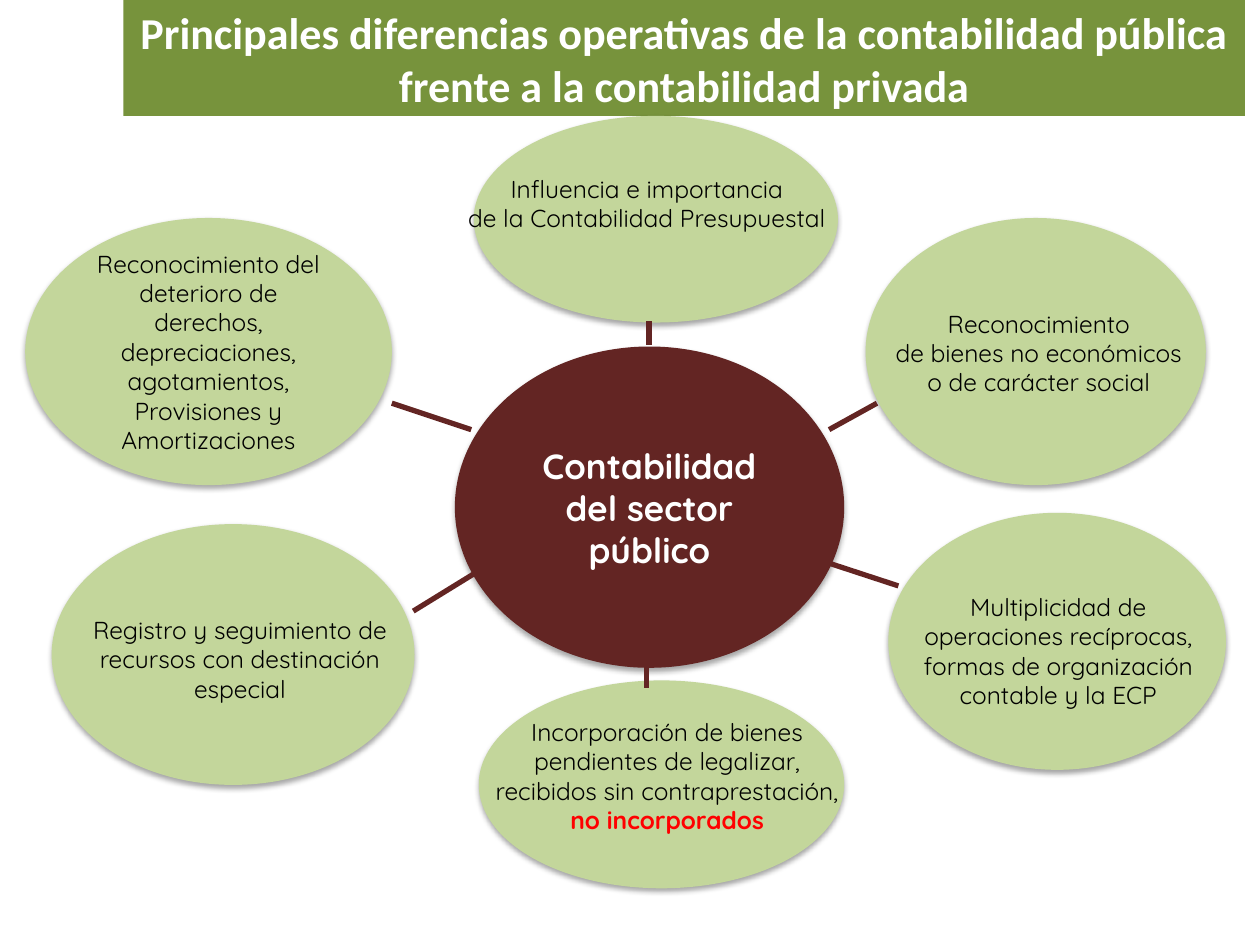
import pptx
import pptx.util
import pptx.dml.color
import pptx.enum.shapes
import pptx.enum.text
import pptx.oxml
import pptx.oxml.ns

Inches, Pt = pptx.util.Inches, pptx.util.Pt
ANCHOR = pptx.enum.text.MSO_ANCHOR

THEME = {
    "banner": "77933C", "bubble": "C3D69B", "hub": "632523",
    "white": "FFFFFF", "ink": "000000", "accent": "FF0000",
    "title_font": "Calibri", "body_font": "Quicksand",
    "title_size": 25.2, "hub_size": 20, "body_size": 14, "line_width": 3,
}

TITLE = ("Principales diferencias operativas de la contabilidad pública "
         "frente a la contabilidad privada")
TITLE_BOX = (0.98, 0, 8.9, 0.92)

HUB = ("Contabilidad del sector público", (3.61, 2.75, 3.09, 2.55))

# Each bubble: ellipse box, label box (None = text inside the ellipse),
# left indent, paragraphs as lists of (text, is_highlighted) runs
BUBBLES = [
    ((0.2, 1.73, 2.91, 2.12), None, 0, [
        [("Reconocimiento del deterioro de derechos, depreciaciones, agotamientos,", False)],
        [("Provisiones y", False)],
        [("Amortizaciones", False)]]),
    ((3.76, 0.92, 2.89, 1.64), (3.61, 1.33, 3.05, 0.81), 0, [
        [("Influencia e importancia", False)],
        [("de la Contabilidad Presupuestal", False)]]),
    ((0.41, 4.16, 2.88, 2.07), (0.33, 4.83, 3.05, 0.81), 0.1, [
        [("Registro y seguimiento de recursos con destinación especial", False)]]),
    ((6.87, 1.73, 2.7, 2.12), (6.74, 2.4, 3.01, 0.81), 0, [
        [("Reconocimiento", False)],
        [("de bienes no económicos", False)],
        [("o de carácter social", False)]]),
    ((7.05, 4.07, 2.68, 2.04), (7.05, 4.65, 2.7, 1.04), 0, [
        [("Multiplicidad de operaciones recíprocas, formas de organización "
          "contable y la ECP", False)]]),
    ((3.8, 5.4, 2.9, 1.65), (3.77, 5.64, 3.05, 1.28), 0, [
        [("Incorporación de bienes pendientes de legalizar, recibidos sin "
          "contraprestación, ", False), ("no incorporados", True)]]),
]

SPOKES = [
    ((3.11, 3.2), (3.74, 3.41)),
    ((3.28, 4.85), (3.8, 4.53)),
    ((5.15, 2.55), (5.15, 2.74)),
    ((6.58, 4.47), (7.13, 4.65)),
    ((6.58, 3.41), (6.96, 3.2)),
    ((5.13, 5.23), (5.13, 5.46)),
]


def rgb(name):
    return pptx.dml.color.RGBColor.from_string(THEME[name])


def inches(values):
    return [Inches(v) for v in values]


def write(s, paragraphs, font="body_font", size="body_size", color="ink",
          bold=False, anchor=ANCHOR.MIDDLE, indent=0):
    """Fill a shape with centred paragraphs of (text, is_highlighted) runs."""
    tf = s.text_frame
    tf.word_wrap = True
    tf.auto_size = pptx.enum.text.MSO_AUTO_SIZE.NONE
    tf.vertical_anchor = anchor
    for i, runs in enumerate(paragraphs):
        p = tf.paragraphs[0] if i == 0 else tf.add_paragraph()
        p.alignment = pptx.enum.text.PP_ALIGN.CENTER
        if indent:
            p._p.get_or_add_pPr().set("marL", str(Inches(indent)))
        for text, highlighted in runs:
            r = p.add_run()
            r.text = text
            r.font.name = THEME[font]
            r.font.size = Pt(THEME[size])
            r.font.bold = bold or highlighted
            r.font.color.rgb = rgb("accent" if highlighted else color)


def add_ellipse(slide, box, fill):
    """Add a borderless ellipse with a soft shadow below it."""
    s = slide.shapes.add_shape(pptx.enum.shapes.MSO_SHAPE.OVAL, *inches(box))
    s.fill.solid()
    s.fill.fore_color.rgb = rgb(fill)
    s.line.fill.background()
    s.shadow.inherit = False
    effects = s._element.spPr.find(pptx.oxml.ns.qn("a:effectLst"))
    effects.append(pptx.oxml.parse_xml(
        f'<a:outerShdw {pptx.oxml.ns.nsdecls("a")} blurRad="{Pt(3.1)}" '
        f'dist="{Pt(1.8)}" dir="5400000" rotWithShape="0">'
        f'<a:srgbClr val="{THEME["ink"]}"><a:alpha val="35000"/></a:srgbClr>'
        '</a:outerShdw>'))
    return s


def add_spoke(slide, start, end):
    s = slide.shapes.add_connector(
        pptx.enum.shapes.MSO_CONNECTOR.STRAIGHT, *inches(start + end))
    s.line.color.rgb = rgb("hub")
    s.line.width = Pt(THEME["line_width"])
    s._element.spPr.append(pptx.oxml.parse_xml(
        f'<a:effectLst {pptx.oxml.ns.nsdecls("a")}/>'))


def add_title(slide):
    s = slide.shapes.title
    s.left, s.top, s.width, s.height = inches(TITLE_BOX)
    s.fill.solid()
    s.fill.fore_color.rgb = rgb("banner")
    write(s, [[(TITLE, False)]], font="title_font", size="title_size",
          color="white", bold=True)


def main():
    prs = pptx.Presentation()
    prs.slide_width, prs.slide_height = inches((10, 7.5))
    slide = prs.slides.add_slide(prs.slide_layouts.get_by_name("Title Only"))
    add_title(slide)

    hub_text, hub_box = HUB
    write(add_ellipse(slide, hub_box, "hub"), [[(hub_text, False)]],
          size="hub_size", color="white", bold=True)

    ellipses = [add_ellipse(slide, bubble[0], "bubble") for bubble in BUBBLES]
    for start, end in SPOKES:
        add_spoke(slide, start, end)
    for ellipse, (_, label_box, indent, paragraphs) in zip(ellipses, BUBBLES):
        if label_box is None:
            write(ellipse, paragraphs)
        else:
            label = slide.shapes.add_textbox(*inches(label_box))
            write(label, paragraphs, anchor=ANCHOR.TOP, indent=indent)

    prs.save("out.pptx")


if __name__ == "__main__":
    main()
